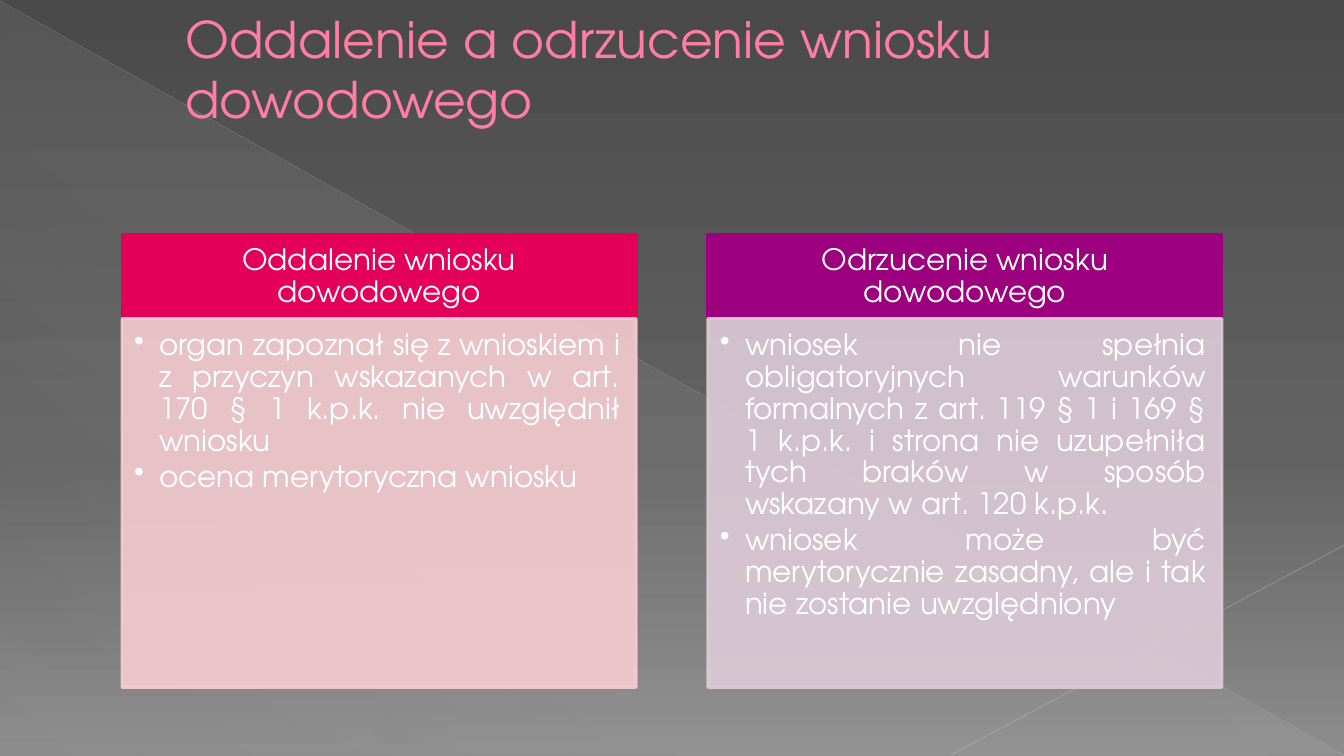
"""Build a slide comparing dismissal and rejection of a motion for evidence."""
import lxml.etree
import pptx
import pptx.dml.color
import pptx.enum.shapes
import pptx.enum.text
import pptx.oxml.ns
import pptx.util

inch, pt = pptx.util.Inches, pptx.util.Pt
rgb = pptx.dml.color.RGBColor.from_string
qn = pptx.oxml.ns.qn
align, anchor = pptx.enum.text.PP_ALIGN, pptx.enum.text.MSO_ANCHOR
shape_type = pptx.enum.shapes.MSO_SHAPE

THEME = {
    "font": "TeX Gyre Adventor", "title_size": 36, "body_size": 21,
    "title": "FF7DA7", "text": "FFFFFF",
    "backdrop": [(0, "4A4A4A", 100), (60, "626262", 100), (100, "8C8C8C", 100)],
    "sheen": [(0, "D2D2D2", 10), (70, "D2D2D2", 8), (100, "D2D2D2", 1)],
}
WIDTH, HEIGHT = 13.33, 7.5
LEFT, TOP = 1.21, 2.33
COL_W, PITCH = 5.1, 5.81
HEAD_H, BODY_H = 0.83, 3.66

columns = [
    ("Oddalenie wniosku dowodowego", "E40059", "F5CCD1",
     ["organ zapoznał się z wnioskiem i z przyczyn wskazanych w art. 170 § 1 k.p.k. "
      "nie uwzględnił wniosku",
      "ocena merytoryczna wniosku"]),
    ("Odrzucenie wniosku dowodowego", "9C007F", "DECCD8",
     ["wniosek nie spełnia obligatoryjnych warunków formalnych z art. 119 § 1 i 169 § 1 k.p.k. "
      "i strona nie uzupełniła tych braków w sposób wskazany w art. 120 k.p.k.",
      "wniosek może być merytorycznie zasadny, ale i tak nie zostanie uwzględniony"]),
]


def set_alpha(owner, percent):
    """Give every colour inside an element the same opacity."""
    for color in owner.iter(qn("a:srgbClr")):
        lxml.etree.SubElement(color, qn("a:alpha"), val=str(percent * 1000))


def write(sp, paragraphs, size=THEME["body_size"], color=THEME["text"], alignment=align.LEFT,
          vertical=anchor.MIDDLE, insets=(0.1, 0.05, 0.1, 0.05), spacing=0.9, after=0,
          margin=0, bullet=False):
    """Fill a shape with formatted paragraphs."""
    tf = sp.text_frame
    tf.word_wrap = True
    tf.vertical_anchor = vertical
    tf.margin_left, tf.margin_top, tf.margin_right, tf.margin_bottom = map(inch, insets)
    for i, text in enumerate(paragraphs):
        p = tf.add_paragraph() if i else tf.paragraphs[0]
        p.alignment, p.line_spacing, p.space_after = alignment, spacing, pt(after)
        props = p._p.get_or_add_pPr()
        props.set("marL", str(inch(margin)))
        if bullet:
            props.set("indent", str(-inch(margin)))
            lxml.etree.SubElement(props, qn("a:buChar"), char="•")
        r = p.add_run()
        r.text = text
        r.font.name, r.font.size = THEME["font"], pt(size)
        r.font.color.rgb = rgb(color)


prs = pptx.Presentation()
prs.slide_width, prs.slide_height = inch(WIDTH), inch(HEIGHT)
s = prs.slides.add_slide(prs.slide_layouts[6])

sheen = s.shapes.add_shape(shape_type.RIGHT_TRIANGLE, 0, inch(0.02),
                           inch(WIDTH), inch(HEIGHT - 0.02))
sheen.shadow.inherit = False
sheen.line.fill.background()

for fill, owner, stops, angle in [
    (s.background.fill, s.background._cSld.bg, THEME["backdrop"], 90),
    (sheen.fill, sheen._element, THEME["sheen"], 133),
]:
    fill.gradient()
    fill.gradient_angle = 360 - angle
    stop_list = next(owner.iter(qn("a:gsLst")))
    for old in list(stop_list):
        stop_list.remove(old)
    for position, color, opacity in stops:
        stop = lxml.etree.SubElement(stop_list, qn("a:gs"), pos=str(position * 1000))
        lxml.etree.SubElement(stop, qn("a:srgbClr"), val=color)
        set_alpha(stop, opacity)

for x1, y1, x2, y2, color, weight, opacity in [
    (0, 0.01, WIDTH, 7.49, "BFBFBF", 0.39, 35),
    (WIDTH, 5.41, 9.43, 7.49, "C6C6C6", 0.47, 45),
]:
    line = s.shapes.add_connector(pptx.enum.shapes.MSO_CONNECTOR.STRAIGHT,
                                  inch(x1), inch(y1), inch(x2), inch(y2))
    line.line.color.rgb, line.line.width = rgb(color), pt(weight)
    set_alpha(line._element, opacity)
    lxml.etree.SubElement(line._element.spPr, qn("a:effectLst"))

title = s.shapes.add_textbox(inch(LEFT), inch(0.08), inch(10.92), inch(1.2))
write(title, ["Oddalenie a odrzucenie wniosku dowodowego"], size=THEME["title_size"],
      color=THEME["title"], spacing=1.0, margin=0.53)

for i, (heading, strong, pale, points) in enumerate(columns):
    for top, height, color, opacity, paragraphs, style in [
        (TOP, HEAD_H, strong, 100, [heading],
         dict(alignment=align.CENTER, insets=(0.16, 0.09, 0.16, 0.09))),
        (TOP + HEAD_H, BODY_H, pale, 90, points,
         dict(alignment=align.JUSTIFY, vertical=anchor.TOP, insets=(0.12, 0.12, 0.16, 0.18),
              after=3, margin=0.25, bullet=True)),
    ]:
        sp = s.shapes.add_shape(shape_type.RECTANGLE, inch(LEFT + i * PITCH), inch(top),
                                inch(COL_W), inch(height))
        sp.shadow.inherit = False
        sp.fill.solid()
        sp.fill.fore_color.rgb = sp.line.color.rgb = rgb(color)
        sp.line.width = pt(2)
        set_alpha(sp._element, opacity)
        write(sp, paragraphs, **style)

prs.save("out.pptx")
